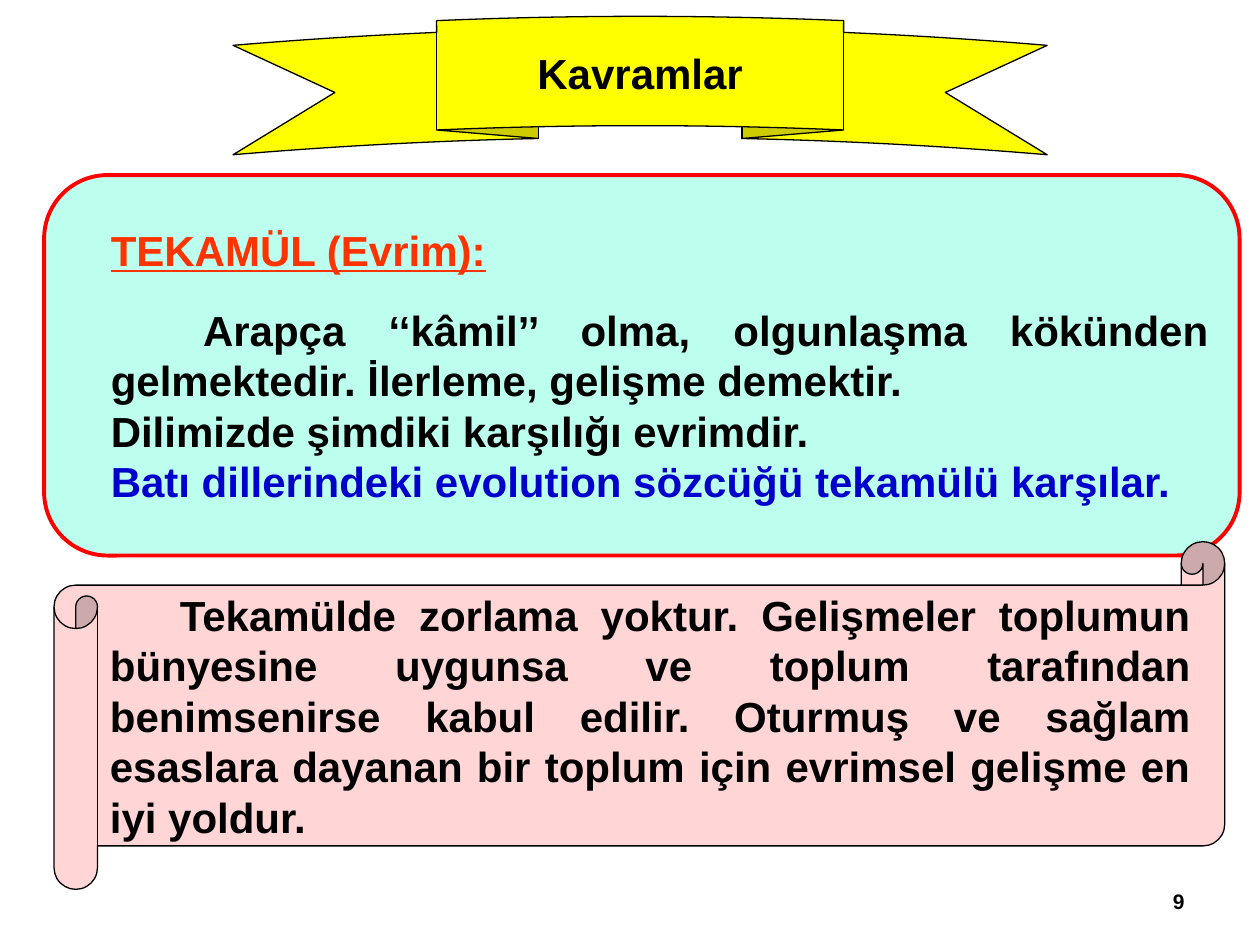
from pptx import Presentation
from pptx import util as u
from pptx.dml.color import RGBColor
from pptx.enum import shapes, text

BLACK, RED, ORANGE, BLUE = "000000", "FF0000", "FF3300", "0000CC"
ALIGN = text.PP_ALIGN
SHAPE = shapes.MSO_SHAPE


def colour(hex_value):
    return RGBColor.from_string(hex_value)


def write(frame, paragraphs, align, size=24, wrap=True):
    """Fill a frame; each paragraph is (wording, options)."""
    frame.word_wrap = wrap
    frame.vertical_anchor = text.MSO_ANCHOR.MIDDLE
    for index, (wording, options) in enumerate(paragraphs):
        para = frame.paragraphs[0] if index == 0 else frame.add_paragraph()
        para.alignment = align
        para.space_before = u.Pt(options.get("before", 0))
        props = para._p.get_or_add_pPr()
        props.set("marL", str(u.Cm(options.get("left", 0))))
        props.set("indent", str(u.Cm(options.get("first", 0))))
        run = para.add_run()
        run.text = wording
        font_format = {"name": "Arial", "size": u.Pt(size), "bold": True,
                       "underline": options.get("underline", False)}
        for key, value in font_format.items():
            setattr(run.font, key, value)
        run.font.color.rgb = colour(options.get("colour", BLACK))


def add_panel(slide, kind, box, fill, line=BLACK, width=0.75):
    panel = slide.shapes.add_shape(kind, *map(u.Cm, box))
    panel.shadow.inherit = False
    panel.fill.solid()
    panel.fill.fore_color.rgb = colour(fill)
    panel.line.color.rgb = colour(line)
    panel.line.width = u.Pt(width)
    return panel


def add_page_number(slide, box):
    number = slide.shapes.add_textbox(*map(u.Cm, box))
    write(number.text_frame, [("9", {})], ALIGN.RIGHT, size=12)


def add_definition(slide, box):
    panel = add_panel(slide, SHAPE.FLOWCHART_ALTERNATE_PROCESS, box,
                      "BDFFEE", RED, 2.25)
    margin = 0.72
    write(panel.text_frame, [
        ("TEKAMÜL (Evrim):",
         {"left": margin, "colour": ORANGE, "underline": True}),
        ("Arapça ‘‘kâmil’’ olma, olgunlaşma kökünden gelmektedir. "
         "İlerleme, gelişme demektir.",
         {"left": margin, "first": 1.86, "before": 17}),
        ("Dilimizde şimdiki karşılığı evrimdir.", {"left": margin}),
        ("Batı dillerindeki evolution sözcüğü tekamülü karşılar.",
         {"left": margin, "colour": BLUE}),
    ], ALIGN.JUSTIFY)


def add_scroll(slide, box):
    scroll = add_panel(slide, SHAPE.HORIZONTAL_SCROLL, box, "FFD5D6")
    write(scroll.text_frame, [
        ("Tekamülde zorlama yoktur. Gelişmeler toplumun bünyesine uygunsa "
         "ve toplum tarafından benimsenirse kabul edilir. Oturmuş ve sağlam "
         "esaslara dayanan bir toplum için evrimsel gelişme en iyi yoldur.",
         {"first": 1.41}),
    ], ALIGN.JUSTIFY)


def add_title_ribbon(slide, box):
    ribbon = add_panel(slide, SHAPE.CURVED_UP_RIBBON, box, "FFFF00")
    for index, value in enumerate((0.21, 0.5, 0.125)):
        ribbon.adjustments[index] = value
    write(ribbon.text_frame, [("Kavramlar", {})], ALIGN.CENTER, wrap=False)


def main():
    deck = Presentation()
    deck.slide_width, deck.slide_height = u.Cm(25.4), u.Cm(19.05)
    slide = deck.slides.add_slide(deck.slide_layouts[6])
    # Boxes are left, top, width, height in centimetres
    add_page_number(slide, (18.21, 17.65, 5.92, 1.02))
    add_definition(slide, (0.89, 3.53, 24.1, 7.67))
    add_scroll(slide, (1.09, 10.92, 23.6, 7.01))
    add_title_ribbon(slide, (4.7, 0.33, 16.41, 2.79))
    deck.save("out.pptx")


if __name__ == "__main__":
    main()
